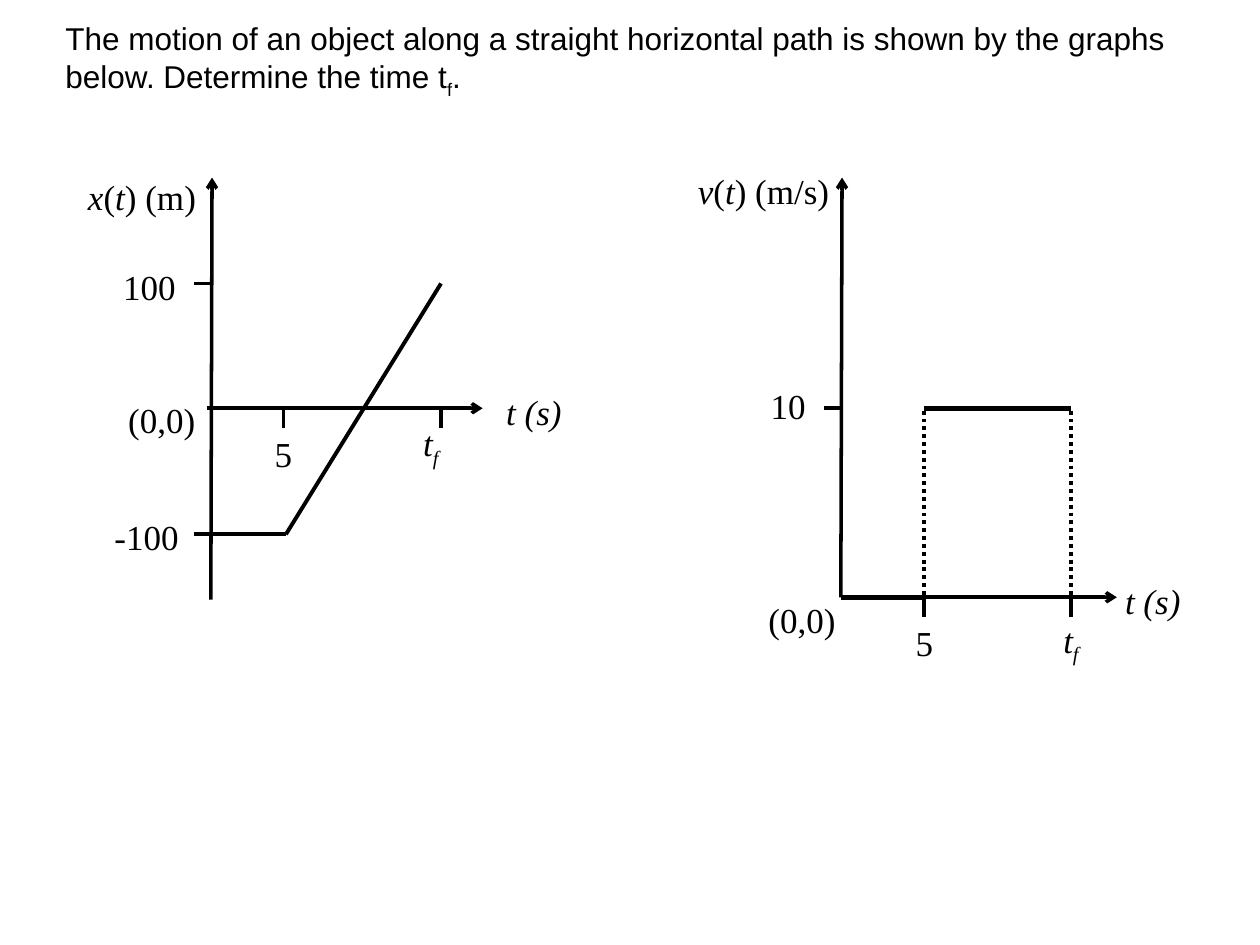
import pptx
import pptx.dml.color
import pptx.enum.dml
import pptx.enum.shapes
import pptx.enum.text
import pptx.oxml.ns
import pptx.util
import lxml.etree

Pt = pptx.util.Pt
BLACK = "000000"

QUESTION = [
    ("The motion of an object along a straight horizontal path is shown "
     "by the graphs below. Determine the time t", ""),
    ("f", "sub"), (".", ""),
]
TIME_AXIS = [("t (s)", "italic")]
FINAL_TIME = [("t", "italic"), ("f", "italic sub")]
ORIGIN = [("(0,0)", "")]

LABELS = [
    ([("x", "italic"), ("(", ""), ("t", "italic"), (") (m)", "")], (43.2, 92.9, 76.3, 33), 0),
    ([("100", "")], (58.3, 144.7, 56.2, 35), 5),
    (ORIGIN, (61.2, 220.3, 64.8, 43), 5),
    ([("-100", "")], (58.3, 287.3, 56.2, 46), 0),
    ([("5", "")], (149.8, 239.8, 46, 45), 0),
    (FINAL_TIME, (234.7, 233.3, 35.3, 45), 0),
    (TIME_AXIS, (282.2, 216, 64.8, 42), 0),
    ([("v", "italic"), ("(", ""), ("t", "italic"), (") (m/s)", "")], (391.7, 90, 112.3, 36), 0),
    ([("10", "")], (413.3, 212.4, 60.5, 45), 20),
    (ORIGIN, (427, 334.8, 64.8, 43), 5),
    ([("5", "")], (516.2, 347.8, 23, 45), 0),
    (FINAL_TIME, (600.5, 345.6, 35.3, 45), 0),
    (TIME_AXIS, (635.8, 324, 64.8, 42), 0),
]

AXIS_TOP, AXIS_LENGTH = 101.5, 157.7
TIME_TICK, VALUE_TICK = 11.5, 9.4

POSITION = {"axis_x": 120.5, "axis_y": 233.3, "bottom": 342.7, "overhang": 2.4,
            "times": (162, 252), "values": (162, 305.3)}
VELOCITY = {"axis_x": 480.5, "axis_y": 341.3, "bottom": 341.3, "overhang": 0,
            "times": (528, 612), "values": (233.3,)}


def rgb(color):
    return pptx.dml.color.RGBColor.from_string(color)


def write(frame, runs, *, font, size, color=BLACK, anchor="TOP", wrap=True,
          spacing=1.0, after=0, indent=0):
    frame.word_wrap = wrap
    frame.auto_size = pptx.enum.text.MSO_AUTO_SIZE.NONE
    frame.vertical_anchor = getattr(pptx.enum.text.MSO_ANCHOR, anchor)
    paragraph = frame.paragraphs[0]
    paragraph.alignment = pptx.enum.text.PP_ALIGN.LEFT
    paragraph.line_spacing = spacing
    paragraph.space_after = Pt(after)
    if indent:
        paragraph._p.get_or_add_pPr().set("marL", str(Pt(indent)))
    for text, style in runs:
        run = paragraph.add_run()
        run.text = text
        run.font.name = font
        run.font.size = Pt(size)
        run.font.color.rgb = rgb(color)
        run.font.italic = "italic" in style
        if "sub" in style:
            run.font._element.set("baseline", "-25000")


def draw_line(shapes, start, end, width=2.25, arrow=False, dotted=False):
    line = shapes.add_connector(pptx.enum.shapes.MSO_CONNECTOR.STRAIGHT,
                                *(Pt(value) for value in (*start, *end)))
    line.line.color.rgb = rgb(BLACK)
    line.line.width = Pt(width)
    if dotted:
        line.line.dash_style = pptx.enum.dml.MSO_LINE.ROUND_DOT
    if arrow:
        lxml.etree.SubElement(line.line._get_or_add_ln(),
                              pptx.oxml.ns.qn("a:tailEnd"), type="arrow")
    lxml.etree.SubElement(line._element.spPr, pptx.oxml.ns.qn("a:effectLst"))


def draw_axes(shapes, graph):
    x, y = graph["axis_x"], graph["axis_y"]
    left = x - graph["overhang"]
    draw_line(shapes, (x, graph["bottom"]), (x + 0.7, AXIS_TOP), 2, arrow=True)
    draw_line(shapes, (left, y), (left + AXIS_LENGTH, y), 2, arrow=True)
    for time in graph["times"]:
        draw_line(shapes, (time, y + TIME_TICK), (time, y))
    for value in graph["values"]:
        draw_line(shapes, (x - VALUE_TICK, value), (x, value))


def main():
    deck = pptx.Presentation()
    deck.slide_width, deck.slide_height = Pt(720), Pt(540)
    slide = deck.slides.add_slide(deck.slide_layouts[5])
    shapes = slide.shapes

    question = shapes.title
    question.left, question.top = Pt(30.2), Pt(8.6)
    question.width, question.height = Pt(653.8), Pt(51.1)
    write(question.text_frame, QUESTION, font="Arial", size=18, anchor="MIDDLE")

    for graph in (POSITION, VELOCITY):
        draw_axes(shapes, graph)

    start, final = POSITION["times"]
    highest, lowest = POSITION["values"]
    draw_line(shapes, (POSITION["axis_x"], lowest), (start + 1.4, lowest))
    draw_line(shapes, (start + 1.4, lowest), (final, highest))

    start, final = VELOCITY["times"]
    speed, rest = VELOCITY["values"][0], VELOCITY["axis_y"]
    draw_line(shapes, (VELOCITY["axis_x"], rest), (start + 1.2, rest), 3)
    draw_line(shapes, (start, speed), (final, speed), 3)
    for time in (start, final):
        draw_line(shapes, (time, speed + 1.4), (time, rest), dotted=True)

    for runs, place, indent in LABELS:
        label = shapes.add_textbox(*(Pt(value) for value in place))
        write(label.text_frame, runs, font="Times New Roman", size=20,
              spacing=1.15, after=10, indent=indent)

    deck.save("out.pptx")


if __name__ == "__main__":
    main()
